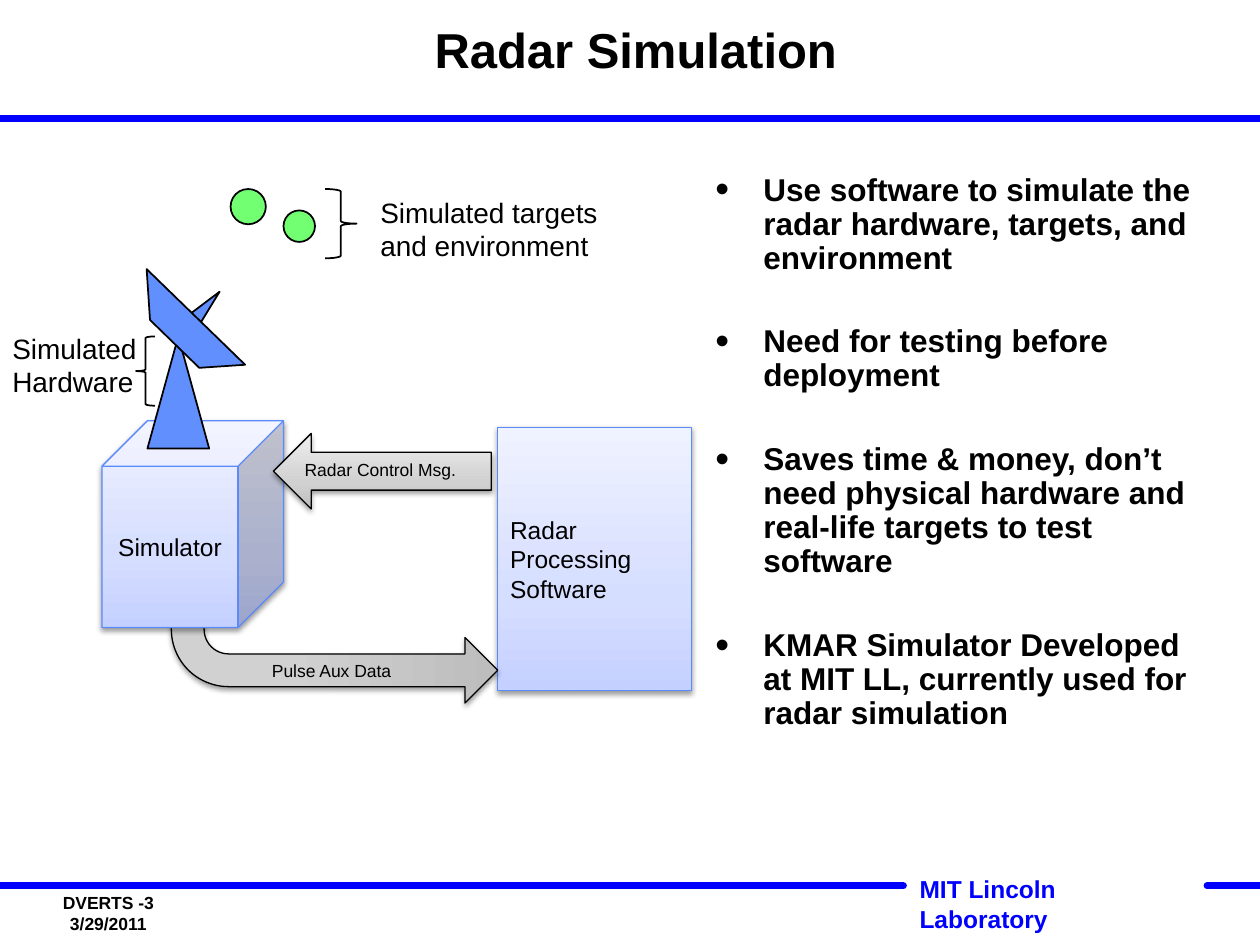
from dataclasses import dataclass
from typing import Optional

from lxml import etree
from pptx import Presentation
from pptx.dml.color import RGBColor
from pptx.enum.shapes import MSO_CONNECTOR, MSO_SHAPE
from pptx.enum.text import MSO_ANCHOR, PP_ALIGN
from pptx.oxml import parse_xml
from pptx.oxml.ns import nsdecls, qn
from pptx.util import Inches, Pt

LEFT, CENTER = PP_ALIGN.LEFT, PP_ALIGN.CENTER
TOP, MIDDLE = MSO_ANCHOR.TOP, MSO_ANCHOR.MIDDLE
STRAIGHT = MSO_CONNECTOR.STRAIGHT
RECTANGLE, CUBE, OVAL = MSO_SHAPE.RECTANGLE, MSO_SHAPE.CUBE, MSO_SHAPE.OVAL
TRIANGLE, STRIPE = MSO_SHAPE.ISOSCELES_TRIANGLE, MSO_SHAPE.DIAGONAL_STRIPE
BENT_ARROW, LEFT_ARROW = MSO_SHAPE.BENT_ARROW, MSO_SHAPE.LEFT_ARROW
LEFT_BRACE, RIGHT_BRACE = MSO_SHAPE.LEFT_BRACE, MSO_SHAPE.RIGHT_BRACE

FONT = "Arial"
BLACK = RGBColor(0x00, 0x00, 0x00)
RULE_BLUE = RGBColor(0x00, 0x00, 0xFF)
EDGE_BLUE = RGBColor(0x5B, 0x8A, 0xFB)
DISH_BLUE = RGBColor(0x61, 0x8F, 0xFD)
TARGET_GREEN = RGBColor(0x72, 0xFF, 0x72)


@dataclass(frozen=True)
class Gradient:
    stops: tuple[tuple[int, RGBColor], ...]
    angle: int


BLUE_FADE = Gradient(((0, RGBColor(0xC4, 0xD0, 0xFF)), (35, RGBColor(0xD6, 0xDE, 0xFF)),
                      (100, RGBColor(0xEF, 0xF2, 0xFF))), 270)
GREY_FADE = Gradient(((0, RGBColor(0xBD, 0xBD, 0xBD)), (35, RGBColor(0xD1, 0xD1, 0xD1)),
                      (100, RGBColor(0xEE, 0xEE, 0xEE))), 270)
GREY_SIDE_FADE = Gradient(((35, RGBColor(0xD1, 0xD1, 0xD1)),
                           (100, RGBColor(0xBD, 0xBD, 0xBD))), 0)


@dataclass(frozen=True)
class Text:
    lines: str
    size: float
    bold: bool = False
    color: RGBColor = BLACK
    align: PP_ALIGN = LEFT
    anchor: MSO_ANCHOR = TOP


@dataclass(frozen=True)
class Part:
    kind: MSO_SHAPE
    at: tuple[float, float, float, float]
    fill: Optional[RGBColor | Gradient] = None
    edge: RGBColor = BLACK
    rotation: float = 0
    flip: bool = False
    text: Optional[Text] = None


@dataclass(frozen=True)
class Label:
    at: tuple[float, float, float, float]
    text: Text


@dataclass(frozen=True)
class Rule:
    start: float
    end: float
    y: float


RULES = [Rule(0, 10, 0.94), Rule(0, 7.17, 7.03), Rule(9.58, 10, 7.03)]

PARTS = [
    Part(TRIANGLE, (1.48, 2.25, 0.19, 0.5), DISH_BLUE, rotation=42.2),
    Part(RECTANGLE, (3.95, 3.39, 1.54, 2.09), BLUE_FADE, EDGE_BLUE,
         text=Text("Radar\nProcessing\nSoftware", 14, anchor=MIDDLE)),
    Part(BENT_ARROW, (1.36, 4.54, 2.59, 1.04), GREY_SIDE_FADE, flip=True),
    Part(CUBE, (0.81, 3.34, 1.44, 1.64), BLUE_FADE, EDGE_BLUE,
         text=Text("Simulator", 14, align=CENTER, anchor=MIDDLE)),
    Part(TRIANGLE, (1.17, 2.67, 0.49, 0.89), DISH_BLUE),
    Part(STRIPE, (1.15, 2.15, 0.81, 0.73), DISH_BLUE, rotation=266.2),
    Part(OVAL, (1.83, 1.5, 0.28, 0.28), TARGET_GREEN),
    Part(OVAL, (2.25, 1.67, 0.25, 0.25), TARGET_GREEN),
    Part(LEFT_BRACE, (1.08, 2.67, 0.15, 0.55)),
    Part(RIGHT_BRACE, (2.58, 1.5, 0.25, 0.55)),
    Part(LEFT_ARROW, (2.17, 3.44, 1.73, 0.6), GREY_FADE,
         text=Text("Radar Control Msg.", 10)),
]

LABELS = [
    Label((2.06, 5.19, 1.19, 0.28), Text("Pulse Aux Data", 10)),
    Label((0, 2.58, 1.5, 0.64), Text("Simulated\nHardware", 16)),
    Label((2.92, 1.5, 1.95, 0.64), Text("Simulated targets\vand environment", 16)),
    Label((0.26, 7, 1.2, 0.5),
          Text("DVERTS -3\n3/29/2011", 10, True, align=CENTER, anchor=MIDDLE)),
]
TITLE = Label((1.17, 0, 7.75, 0.83),
              Text("Radar Simulation", 28, True, align=CENTER, anchor=MIDDLE))
LABORATORY = Label((7.2, 6.89, 2.34, 0.33),
                   Text("MIT Lincoln Laboratory", 14, True, RULE_BLUE))
POINTS = Label((5.58, 1.33, 4.08, 5.25), Text(
    "Use software to simulate the radar hardware, targets, and environment\n"
    "Need for testing before deployment\n"
    "Saves time & money, don’t need physical hardware and real-life targets to test software\n"
    "KMAR Simulator Developed at MIT LL, currently used for radar simulation", 18, True))


def write_text(shape, text: Text):
    frame = shape.text_frame
    frame.text = text.lines
    frame.word_wrap = True
    frame.vertical_anchor = text.anchor
    for para in frame.paragraphs:
        para.alignment = text.align
        for span in para.runs:
            font = span.font
            font.name, font.size, font.bold = FONT, Pt(text.size), text.bold
            font.color.rgb = text.color
    return frame


def add_label(page, label: Label):
    box = page.shapes.add_textbox(*map(Inches, label.at))
    return write_text(box, label.text)


def add_rule(page, rule: Rule) -> None:
    line = page.shapes.add_connector(STRAIGHT, Inches(rule.start), Inches(rule.y),
                                     Inches(rule.end), Inches(rule.y))
    line.line.color.rgb = RULE_BLUE
    line.line.width = Pt(4)
    properties = line._element.spPr
    properties.find(qn("a:ln")).set("cap", "rnd")
    etree.SubElement(properties, qn("a:effectLst"))


def apply_gradient(shape, gradient: Gradient) -> None:
    """Fill with any number of stops and add the soft shadow of the shaded parts."""
    shape.fill.gradient()
    shape.fill.gradient_angle = -gradient.angle % 360
    stop_list = shape._element.spPr.find(qn("a:gradFill")).find(qn("a:gsLst"))
    stop_list.clear()
    for position, color in gradient.stops:
        stop = etree.SubElement(stop_list, qn("a:gs"), pos=str(position * 1000))
        etree.SubElement(stop, qn("a:srgbClr"), val=str(color))
    effects = shape._element.spPr.find(qn("a:effectLst"))
    effects.append(parse_xml(
        f'<a:outerShdw {nsdecls("a")} blurRad="{Pt(3.1)}" dist="{Pt(1.6)}" dir="5400000" '
        'rotWithShape="0"><a:srgbClr val="000000"><a:alpha val="38000"/></a:srgbClr>'
        '</a:outerShdw>'))


def add_part(page, part: Part) -> None:
    shape = page.shapes.add_shape(part.kind, *map(Inches, part.at))
    shape.shadow.inherit = False
    shape.rotation = part.rotation
    shape.line.color.rgb = part.edge
    shape.line.width = Pt(1)
    if part.flip:
        shape._element.spPr.find(qn("a:xfrm")).set("flipV", "1")
    if isinstance(part.fill, Gradient):
        shape.line.width = Pt(0.75)
        apply_gradient(shape, part.fill)
    elif part.fill is None:
        shape.fill.background()
    else:
        shape.fill.solid()
        shape.fill.fore_color.rgb = part.fill
    if part.text:
        write_text(shape, part.text)


def add_points(page) -> None:
    for index, para in enumerate(add_label(page, POINTS).paragraphs):
        para.line_spacing = 0.9
        para.space_before = Pt(28.5 if index else 0)
        properties = para._p.get_or_add_pPr()
        properties.set("marL", str(Inches(0.38)))
        properties.set("indent", str(-Inches(0.38)))
        etree.SubElement(properties, qn("a:buSzPct"), val="125000")
        etree.SubElement(properties, qn("a:buFont"), typeface=FONT)
        etree.SubElement(properties, qn("a:buChar"), char="•")


def main() -> None:
    deck = Presentation()
    deck.slide_width, deck.slide_height = Inches(10), Inches(7.5)
    page = deck.slides.add_slide(deck.slide_layouts[6])
    for rule in RULES:
        add_rule(page, rule)
    add_label(page, TITLE).paragraphs[0].line_spacing = Pt(30)
    add_label(page, LABORATORY).margin_right = Inches(0.6)
    add_points(page)
    for part in PARTS:
        add_part(page, part)
    for label in LABELS:
        add_label(page, label)
    deck.save("out.pptx")


if __name__ == "__main__":
    main()
